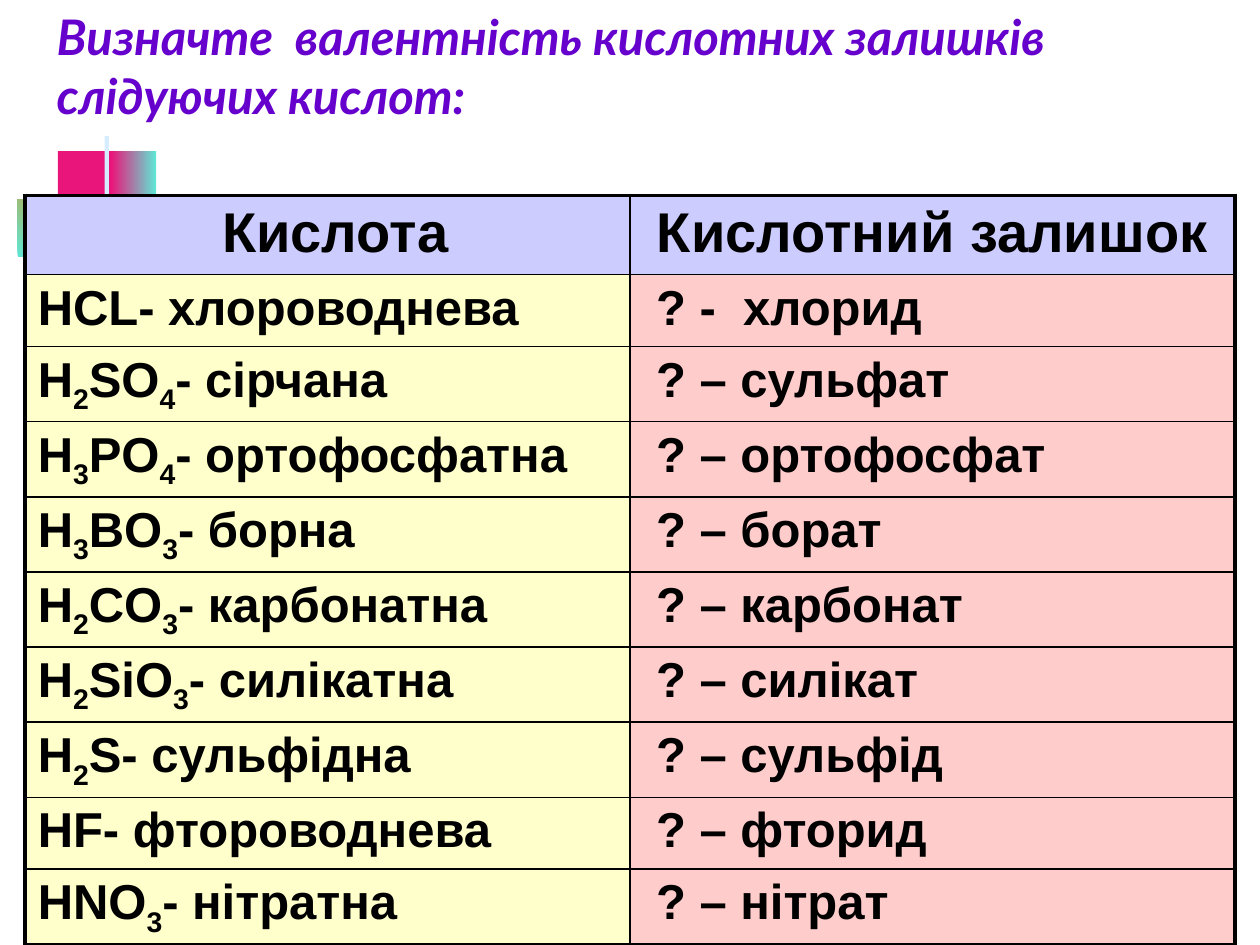
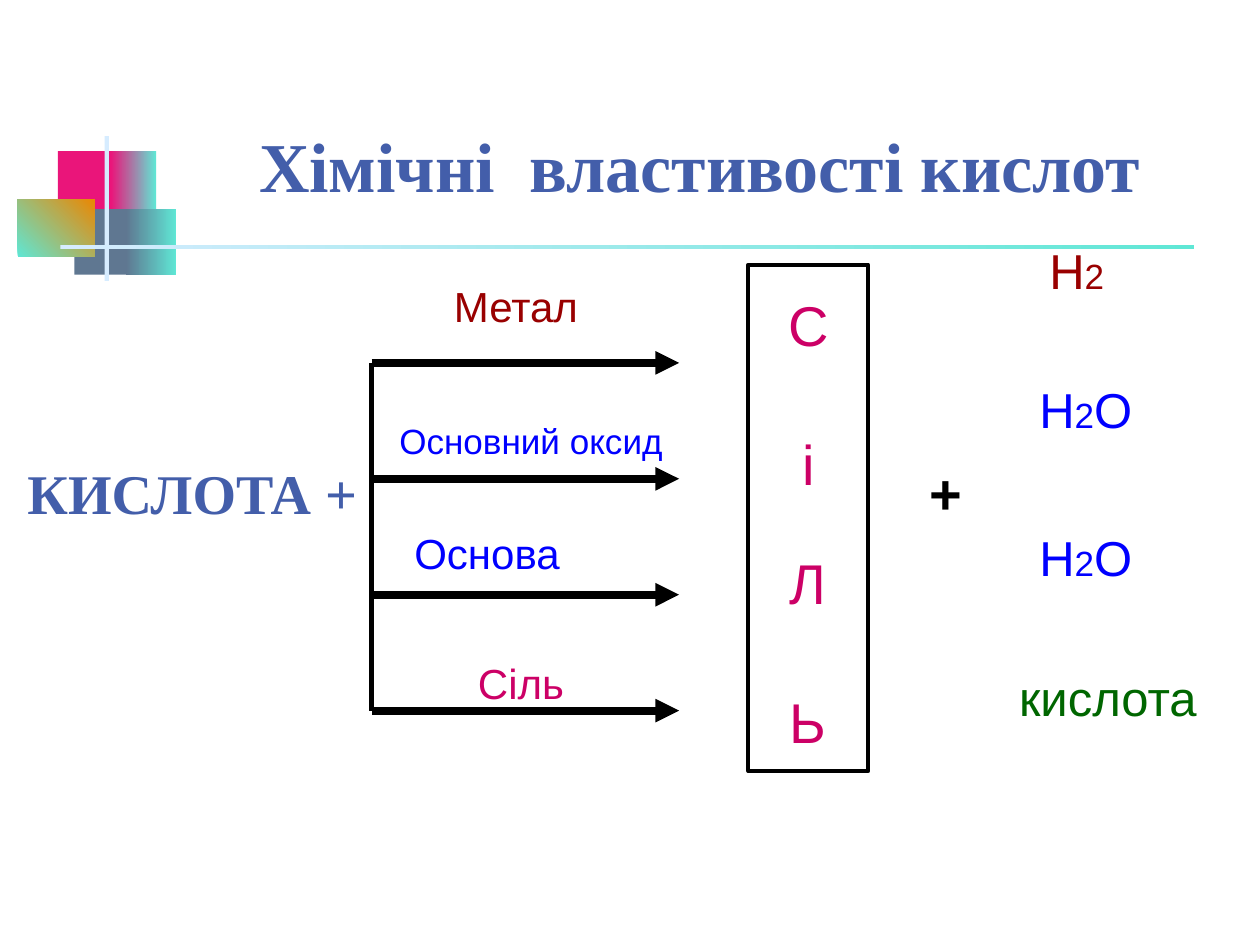
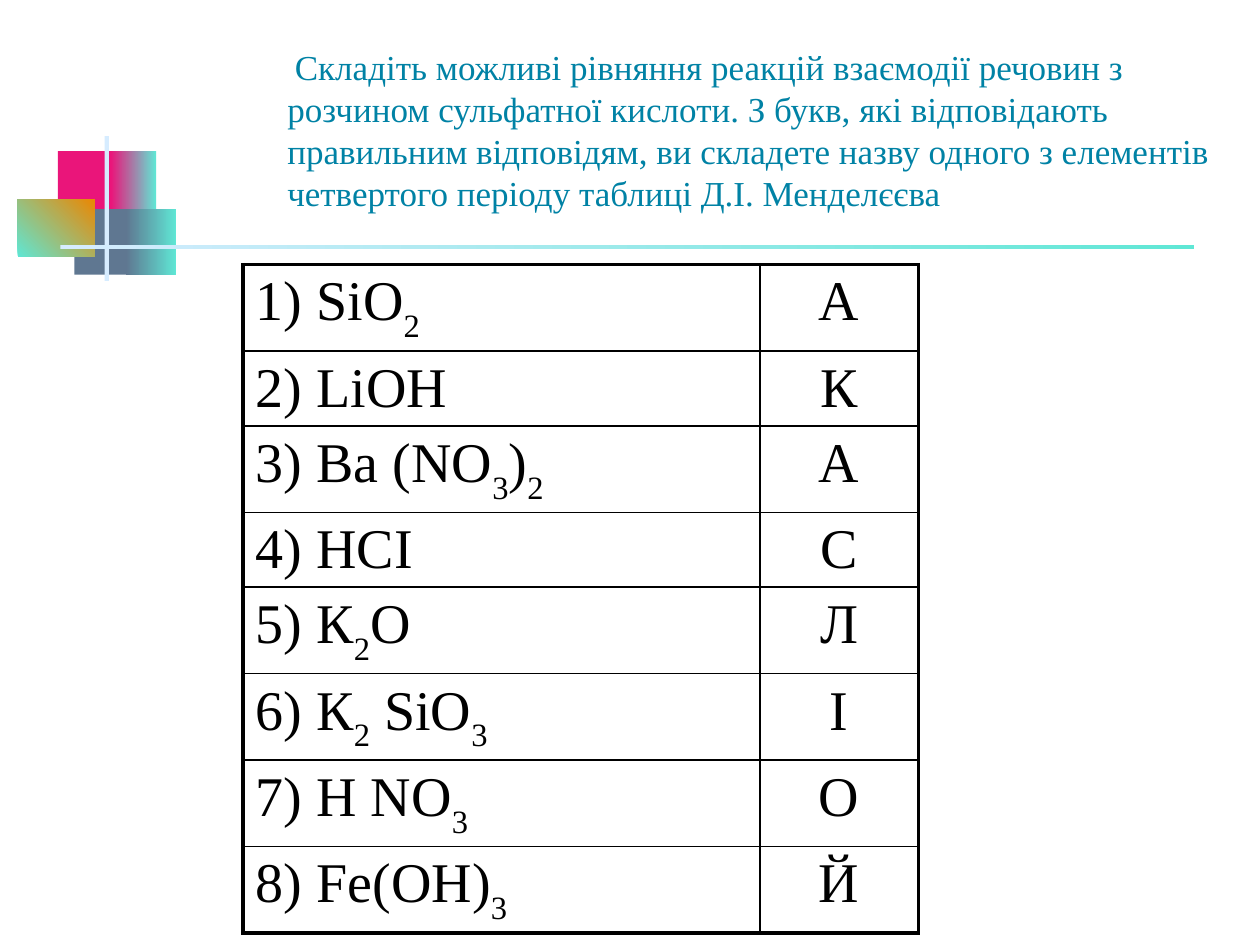
import pptx
import pptx.util
import pptx.dml.color
import pptx.enum.shapes
import pptx.enum.text
import pptx.oxml
import pptx.oxml.ns

RGB = pptx.dml.color.RGBColor
ALIGN = pptx.enum.text.PP_ALIGN
ANCHOR = pptx.enum.text.MSO_ANCHOR
RECT = pptx.enum.shapes.MSO_SHAPE.RECTANGLE

BLACK = RGB(0x00, 0x00, 0x00)
PINK = RGB(0xEA, 0x15, 0x7A)
TEAL = RGB(0x5F, 0xE7, 0xD5)
SLATE = RGB(0x5F, 0x77, 0x91)
ORANGE = RGB(0xEB, 0x88, 0x03)
ICE = RGB(0xD6, 0xEC, 0xFF)
VIOLET = RGB(0x66, 0x00, 0xCC)
NAVY = RGB(0x43, 0x5E, 0xAA)
SEA = RGB(0x00, 0x82, 0xA5)
LILAC = RGB(0xCC, 0xCC, 0xFF)
CREAM = RGB(0xFF, 0xFF, 0xCC)
ROSE = RGB(0xFF, 0xCC, 0xCC)
CRIMSON = RGB(0xCC, 0x00, 0x66)
MAROON = RGB(0x99, 0x00, 0x00)
BLUE = RGB(0x00, 0x00, 0xFF)
GREEN = RGB(0x00, 0x66, 0x00)

SANS = "Arial"
SERIF = "Times New Roman"
THICK, THIN = 2.25, 1

SLIDE_W = pptx.util.Inches(10)
SLIDE_H = pptx.util.Inches(7.5)
GRID_COLS = 100
CELL = SLIDE_W // GRID_COLS


def units(*values):
    return [round(v * CELL) for v in values]


def write(p, text, size=28, color=BLACK, font=SANS, bold=False, italic=False,
          align=ALIGN.LEFT, spacing=None, before=0, sub_size=None, sub_base=-25):
    p.alignment = align
    p.space_before = pptx.util.Pt(before)
    if spacing:
        p.line_spacing = spacing
    head, *tails = text.split("_")
    pieces = [(head, False)]
    for tail in tails:
        pieces += [(tail[0], True), (tail[1:], False)]
    for piece, is_sub in pieces:
        if not piece:
            continue
        r = p.add_run()
        r.text = piece
        r.font.name = font
        r.font.size = pptx.util.Pt(size)
        r.font.bold = bold
        r.font.italic = italic
        r.font.color.rgb = color
        if is_sub and sub_size:
            r.font.size = pptx.util.Pt(sub_size)
        elif is_sub:
            r.font._element.set("baseline", str(sub_base * 1000))


def add_label(slide, box, text, **fmt):
    tf = slide.shapes.add_textbox(*units(*box)).text_frame
    tf.word_wrap = True
    write(tf.paragraphs[0], text, **fmt)


def set_title(slide, box, text, anchor=ANCHOR.MIDDLE, hang=(0, 0), **fmt):
    sp = slide.shapes.title
    sp.left, sp.top, sp.width, sp.height = units(*box)
    tf = sp.text_frame
    tf.auto_size = pptx.enum.text.MSO_AUTO_SIZE.NONE
    tf.word_wrap = True
    tf.vertical_anchor = anchor
    p = tf.paragraphs[0]
    write(p, text, **fmt)
    pPr = p._p.get_or_add_pPr()
    for name, value in zip(("marL", "indent"), units(*hang)):
        pPr.set(name, str(value))


def add_block(shapes, box, start, end=None, angle=0):
    sp = shapes.add_shape(RECT, *units(*box))
    sp.shadow.inherit = False
    sp.line.fill.background()
    if end is None:
        sp.fill.solid()
        sp.fill.fore_color.rgb = start
    else:
        sp.fill.gradient()
        sp.fill.gradient_angle = angle
        for stop, color in zip(sp.fill.gradient_stops, (start, end)):
            stop.color.rgb = color
    return sp


def add_motif(slide, layout):
    blocks = [
        ((4.6, 12, 4.8, 5.2), PINK),
        ((8.8, 12, 3.6, 5.2), PINK, TEAL),
        ((5.9, 16.6, 4.6, 5.2), SLATE),
        ((10, 16.6, 4, 5.2), SLATE, TEAL),
        ((1.4, 15.8, 6.1, 4.6), TEAL, ORANGE, 45),
        ((8.3, 10.8, 0.35, 11.5), ICE),
        ((4.8, 19.45, 90, 0.35), ICE, TEAL),
    ]
    for block in blocks:
        layout.shapes.element.append(add_block(slide.shapes, *block).element)


def set_border(cell, side, width):
    tcPr = cell._tc.get_or_add_tcPr()
    ln = pptx.oxml.parse_xml(
        f'<a:ln{side} {pptx.oxml.ns.nsdecls("a")} w="{pptx.util.Pt(width)}">'
        f'<a:solidFill><a:srgbClr val="{BLACK}"/></a:solidFill></a:ln{side}>')
    tcPr.append(ln)


def add_grid(slide, left, top, widths, heights, rows, style):
    n_rows, n_cols = len(rows), len(widths)
    box = units(left, top, sum(widths), sum(heights))
    table = slide.shapes.add_table(n_rows, n_cols, *box).table
    table.first_row = table.horz_banding = False
    for column, width in zip(table.columns, units(*widths)):
        column.width = width
    for row, height in zip(table.rows, units(*heights)):
        row.height = height
    for i, texts in enumerate(rows):
        for j, text in enumerate(texts):
            cell = table.cell(i, j)
            outer = {"L": j == 0, "R": j == n_cols - 1,
                     "T": i == 0, "B": i == n_rows - 1}
            for side, is_outer in outer.items():
                set_border(cell, side, THICK if is_outer else THIN)
            fill, fmt = style(i, j)
            if fill is None:
                cell.fill.background()
            else:
                cell.fill.solid()
                cell.fill.fore_color.rgb = fill
            write(cell.text_frame.paragraphs[0], text, **fmt)


def add_line(slide, x1, y1, x2, y2, width, arrow=False):
    cx = slide.shapes.add_connector(
        pptx.enum.shapes.MSO_CONNECTOR.STRAIGHT, *units(x1, y1, x2, y2))
    cx.line.color.rgb = BLACK
    cx.line.width = pptx.util.Pt(width)
    ns = pptx.oxml.ns.nsdecls("a")
    if arrow:
        cx.line._get_or_add_ln().append(
            pptx.oxml.parse_xml(f'<a:tailEnd {ns} type="triangle"/>'))
    cx._element.spPr.append(pptx.oxml.parse_xml(f"<a:effectLst {ns}/>"))


def acid_style(i, j):
    if i == 0:
        return LILAC, dict(size=32, bold=True, align=ALIGN.CENTER)
    return (CREAM, ROSE)[j], dict(size=28, bold=True)


def letter_style(i, j):
    align = (ALIGN.LEFT, ALIGN.CENTER)[j]
    return None, dict(size=32, font=SERIF, align=align, sub_base=-30)


def build_residues(slide):
    set_title(slide, (3.5, 0, 90, 13.9),
              "Визначте  валентність кислотних залишків слідуючих кислот:",
              anchor=ANCHOR.TOP, size=28, font="Lato", color=VIOLET,
              bold=True, italic=True)
    rows = [
        (" Кислота", "Кислотний залишок"),
        ("HCL- хлороводнева", " ? -  хлорид"),
        ("H_2SO_4- сірчана", " ? – сульфат"),
        ("H_3PO_4- ортофосфатна", " ? – ортофосфат"),
        ("H_3BO_3- борна", " ? – борат"),
        ("H_2CO_3- карбонатна", " ? – карбонат"),
        ("H_2SiO_3- силікатна", " ? – силікат"),
        ("H_2S- сульфідна", " ? – сульфід"),
        ("HF- фтороводнева", " ? – фторид"),
        ("HNO_3- нітратна", " ? – нітрат"),
    ]
    heights = [6.3] + [5.7] * (len(rows) - 1)
    add_grid(slide, 2, 15.5, [48, 48], heights, rows, acid_style)


def add_salt_box(slide):
    sp = slide.shapes.add_shape(RECT, *units(59.4, 21, 9.5, 40.2))
    sp.shadow.inherit = False
    sp.fill.background()
    sp.line.color.rgb = BLACK
    sp.line.width = pptx.util.Pt(THICK)
    tf = sp.text_frame
    tf.vertical_anchor = ANCHOR.TOP
    for i, letter in enumerate("СіЛЬ"):
        p = tf.add_paragraph() if i else tf.paragraphs[0]
        write(p, letter, size=32, color=CRIMSON, align=ALIGN.CENTER,
              spacing=(1.3, 1.6)[i % 2], before=18 if i else 0)


def build_properties(slide):
    set_title(slide, (15.3, 9.1, 80.5, 7.9), "Хімічні  властивості кислот",
              size=40, font=SERIF, color=NAVY, bold=True, align=ALIGN.CENTER)
    add_label(slide, (1.2, 35.9, 32.3, 6.3), "КИСЛОТА +",
              size=32, font=SERIF, color=NAVY, bold=True)
    add_salt_box(slide)

    reagents = [
        ((31.9, 21.8, 18.1, 5), "Метал", 24, MAROON, ALIGN.CENTER),
        ((27.2, 32.8, 29.9, 4.4), "Основний оксид", 20, BLUE, ALIGN.CENTER),
        ((31.9, 41.4, 22.3, 5), "Основа", 24, BLUE, ALIGN.LEFT),
        ((31.1, 51.7, 20.5, 5), "Сіль", 24, CRIMSON, ALIGN.CENTER),
    ]
    stem_x, tip_x, first_y, step = 29.5, 53.9, 28.8, 9.2
    for i, (box, text, size, color, align) in enumerate(reagents):
        add_label(slide, box, text, size=size, color=color, align=align)
        y = first_y + i * step
        add_line(slide, stem_x, y, tip_x, y, 4.5, arrow=True)
    last_y = first_y + (len(reagents) - 1) * step
    add_line(slide, stem_x, first_y, stem_x, last_y, 3)

    add_label(slide, (72.8, 35.9, 5, 6.3), "+", size=32, bold=True)
    products = [
        ((82.3, 18.6, 9.4, 5.7), "Н_2", MAROON),
        ((81.5, 29.6, 11.8, 5.7), "Н_2О", BLUE),
        ((81.5, 41.4, 13.4, 5.7), "Н_2О", BLUE),
        ((79.9, 52.5, 17.3, 5.7), "кислота", GREEN),
    ]
    for box, text, color in products:
        add_label(slide, box, text, size=28, color=color, sub_size=20)


def build_puzzle(slide):
    set_title(slide, (12.6, 2.3, 85.2, 16),
              "Складіть можливі рівняння реакцій взаємодії речовин з розчином "
              "сульфатної кислоти. З букв, які відповідають правильним "
              "відповідям, ви складете назву одного з елементів четвертого "
              "періоду таблиці Д.І. Менделєєва",
              hang=(9.2, 0.6), size=20, font=SERIF, color=SEA)
    formulas = ["SiО_2", "LiОН", "Ва (NО_3)_2", "НСI",
                "К_2О", "К_2 SiО_3", "Н NО_3", "Fе(ОН)_3"]
    rows = [(f"{n}) {formula}", letter)
            for n, (formula, letter) in enumerate(zip(formulas, "АКАСЛІОЙ"), 1)]
    heights = [4.8] + [5] * (len(rows) - 1)
    add_grid(slide, 19.3, 21, [41, 12.6], heights, rows, letter_style)


def main():
    prs = pptx.Presentation()
    prs.slide_width, prs.slide_height = SLIDE_W, SLIDE_H
    layout = prs.slide_layouts.get_by_name("Title Only")
    builders = (build_residues, build_properties, build_puzzle)
    slides = [prs.slides.add_slide(layout) for _ in builders]
    add_motif(slides[0], layout)
    for build, slide in zip(builders, slides):
        build(slide)
    prs.save("out.pptx")


if __name__ == "__main__":
    main()
